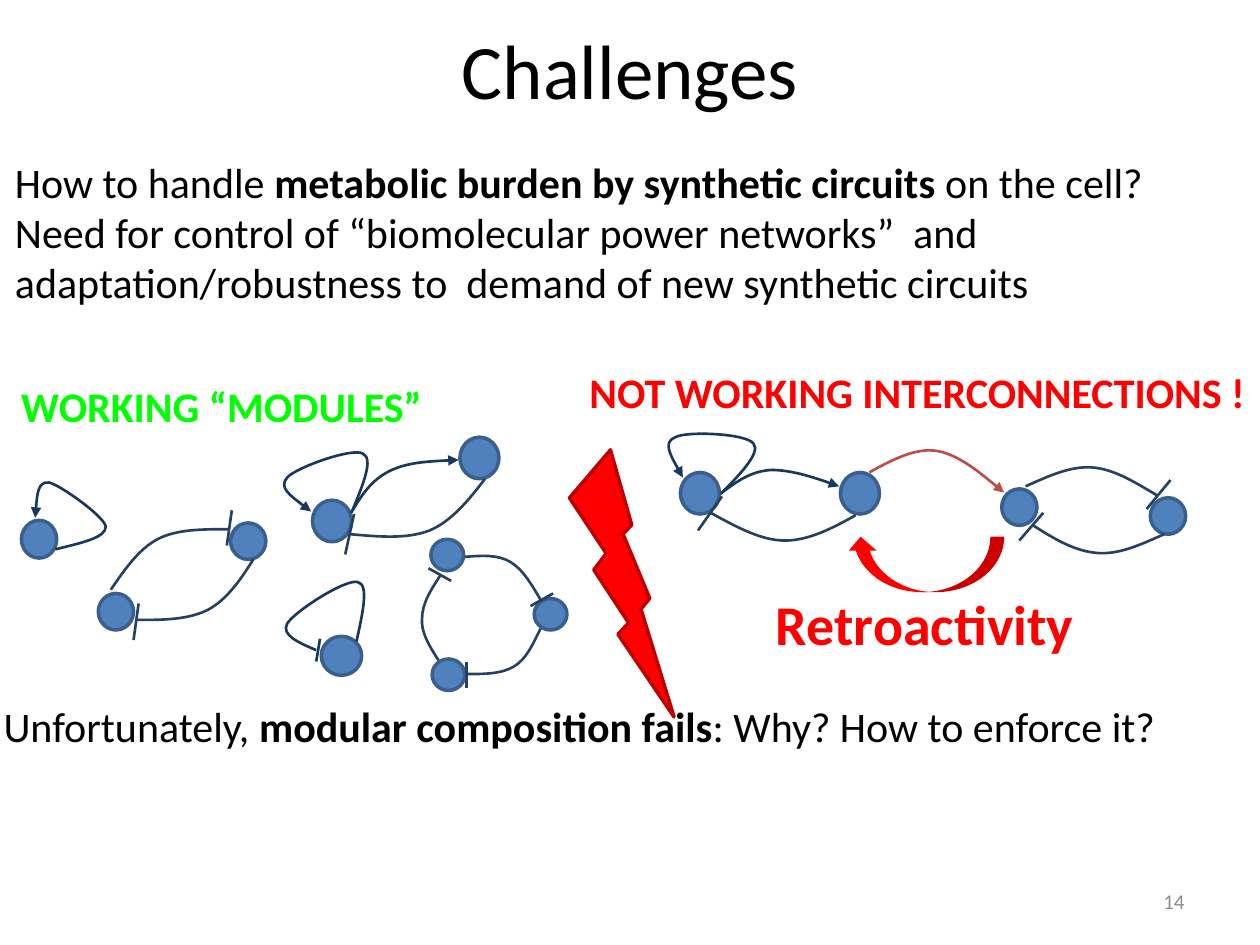
from lxml.etree import SubElement
from pptx import Presentation
from pptx.dml.color import RGBColor
from pptx.enum.shapes import MSO_CONNECTOR, MSO_SHAPE
from pptx.enum.text import MSO_ANCHOR, PP_ALIGN
from pptx.oxml.ns import qn
from pptx.util import Inches, Pt

FONT = "Calibri"
NAVY, STEEL, BLUE, RED = "17375E", "254061", "4F81BD", "FF0000"


def color(hex_text):
    return RGBColor.from_string(hex_text)


def lengths(*values):
    return [Inches(value) for value in values]


def style_line(line, hex_text, width=1.5):
    line.color.rgb = color(hex_text)
    line.width = Pt(width)


def write(box, paragraphs, size, hex_text="000000", bold=False,
          align=PP_ALIGN.LEFT, anchor=MSO_ANCHOR.TOP, wrap=True):
    """Each paragraph is a list of spans; every second span is bold."""
    frame = box.text_frame
    frame.word_wrap = wrap
    frame.vertical_anchor = anchor
    for index, spans in enumerate(paragraphs):
        para = frame.add_paragraph() if index else frame.paragraphs[0]
        para.alignment = align
        font = para.font
        font.name, font.size, font.bold = FONT, Pt(size), bold
        font.color.rgb = color(hex_text)
        for position, text in enumerate(spans):
            span = para.add_run()
            span.text = text
            if position % 2:
                span.font.bold = True


def add_text(page, place, paragraphs, size, **options):
    write(page.shapes.add_textbox(*lengths(*place)), paragraphs, size, **options)


def add_preset(page, kind, place, fill, outline=None):
    shape = page.shapes.add_shape(kind, *lengths(*place))
    shape.shadow.inherit = False
    shape.fill.solid()
    shape.fill.fore_color.rgb = color(fill)
    if outline:
        style_line(shape.line, outline, 2)
    else:
        shape.line.fill.background()
    return shape


def add_nodes(page, size, corners):
    for corner in corners:
        add_preset(page, MSO_SHAPE.OVAL, (*corner, *size), BLUE, "3A5F8C")


def add_curve(page, points, hex_text):
    """Draw a chain of cubic curves: a start, then three points per curve."""
    start, *rest = [lengths(*point) for point in points]
    builder = page.shapes.build_freeform(*start)
    builder.add_line_segments(rest, close=False)
    shape = builder.convert_to_shape()
    shape.shadow.inherit = False
    shape.fill.background()
    style_line(shape.line, hex_text)
    # Turn each three straight segments into one cubic curve
    outline = next(shape.element.iter(qn("a:path")))
    segments = outline.findall(qn("a:lnTo"))
    for first in range(0, len(segments), 3):
        cubic = SubElement(outline, qn("a:cubicBezTo"))
        for segment in segments[first:first + 3]:
            cubic.append(segment[0])
            outline.remove(segment)
    return shape


def activate(page, points, hex_text=NAVY):
    shape = add_curve(page, points, hex_text)
    SubElement(shape.line._get_or_add_ln(), qn("a:tailEnd"), type="triangle")


def repress(page, points, bar, hex_text=STEEL):
    add_curve(page, points, hex_text)
    line = page.shapes.add_connector(MSO_CONNECTOR.STRAIGHT, *lengths(*bar))
    style_line(line.line, hex_text)
    SubElement(line.element.spPr, qn("a:effectLst"))


def add_working_modules(page):
    # Toggle switch
    add_nodes(page, (0.28, 0.29), [(0.78, 4.71), (1.83, 4.15)])
    repress(page, [(0.88, 4.68), (0.99, 4.52), (1.1, 4.36), (1.25, 4.28),
                   (1.4, 4.2), (1.61, 4.2), (1.81, 4.2)], (1.84, 4.05, 1.8, 4.33))
    repress(page, [(2.01, 4.44), (1.91, 4.6), (1.8, 4.76), (1.65, 4.84),
                   (1.49, 4.92), (1.29, 4.92), (1.09, 4.92)], (1.06, 5.08, 1.1, 4.79))
    # Self-repression
    add_nodes(page, (0.32, 0.31), [(2.55, 5.05)])
    repress(page, [(2.83, 5.09), (2.88, 4.86), (2.93, 4.64), (2.84, 4.62),
                   (2.75, 4.59), (2.34, 4.85), (2.28, 4.95),
                   (2.23, 5.04), (2.37, 5.1), (2.51, 5.16)],
            (2.51, 5.25, 2.54, 5.07), NAVY)
    # Self-activation
    add_nodes(page, (0.28, 0.3), [(0.17, 4.13)])
    activate(page, [(0.44, 4.36), (0.64, 4.31), (0.84, 4.27), (0.84, 4.18),
                    (0.83, 4.1), (0.48, 3.85), (0.39, 3.83),
                    (0.3, 3.82), (0.29, 3.97), (0.28, 4.11)])
    # Oscillator
    add_nodes(page, (0.31, 0.33), [(2.48, 3.97), (3.65, 3.47)])
    activate(page, [(2.79, 4.07), (2.88, 3.85), (2.97, 3.64), (2.88, 3.6),
                    (2.8, 3.55), (2.35, 3.71), (2.28, 3.79),
                    (2.21, 3.87), (2.34, 3.96), (2.47, 4.06)])
    activate(page, [(2.8, 4.05), (2.87, 3.93), (2.95, 3.81), (3.09, 3.74),
                    (3.23, 3.67), (3.44, 3.66), (3.64, 3.65)])
    repress(page, [(3.85, 3.8), (3.72, 3.97), (3.58, 4.14), (3.41, 4.21),
                   (3.23, 4.28), (3.01, 4.26), (2.78, 4.24)], (2.74, 4.4, 2.81, 4.08))
    # Ring of three
    add_nodes(page, (0.26, 0.25), [(3.42, 4.28), (4.24, 4.75), (3.43, 5.23)])
    repress(page, [(3.69, 4.42), (3.82, 4.41), (3.95, 4.4), (4.05, 4.46),
                   (4.15, 4.52), (4.22, 4.64), (4.29, 4.76)], (4.39, 4.71, 4.21, 4.81))
    repress(page, [(4.29, 4.99), (4.23, 5.11), (4.18, 5.23), (4.08, 5.29),
                   (3.98, 5.35), (3.84, 5.35), (3.71, 5.35)], (3.7, 5.46, 3.7, 5.25))
    repress(page, [(3.48, 5.24), (3.41, 5.13), (3.34, 5.02), (3.35, 4.91),
                   (3.35, 4.79), (3.42, 4.68), (3.5, 4.56)], (3.4, 4.51, 3.58, 4.61))


def add_interconnection(page):
    # Oscillator
    add_nodes(page, (0.31, 0.33), [(5.4, 3.75), (6.67, 3.75)])
    activate(page, [(5.72, 3.92), (5.88, 3.76), (6.04, 3.59), (5.98, 3.52),
                    (5.92, 3.44), (5.45, 3.42), (5.36, 3.47),
                    (5.26, 3.51), (5.34, 3.65), (5.42, 3.79)])
    activate(page, [(5.73, 3.91), (5.85, 3.82), (5.96, 3.74), (6.12, 3.73),
                    (6.27, 3.73), (6.47, 3.79), (6.66, 3.86)])
    repress(page, [(6.79, 4.09), (6.61, 4.19), (6.42, 4.29), (6.23, 4.29),
                   (6.04, 4.29), (5.84, 4.18), (5.64, 4.07)], (5.54, 4.21, 5.73, 3.94))
    # Link between the modules
    activate(page, [(6.9, 3.75), (7.08, 3.65), (7.27, 3.55), (7.44, 3.58),
                    (7.62, 3.61), (7.97, 3.91), (7.97, 3.91)], "BF4C48")
    # Toggle switch
    add_nodes(page, (0.28, 0.29), [(7.95, 3.88), (9.13, 3.95)])
    repress(page, [(8.14, 3.86), (8.32, 3.78), (8.49, 3.7), (8.66, 3.71),
                   (8.84, 3.72), (9.01, 3.83), (9.18, 3.93)], (9.29, 3.81, 9.1, 4.04))
    repress(page, [(9.24, 4.24), (9.06, 4.32), (8.89, 4.4), (8.72, 4.39),
                   (8.54, 4.38), (8.37, 4.28), (8.2, 4.17)], (8.09, 4.29, 8.28, 4.07))


def main():
    deck = Presentation()
    deck.slide_width, deck.slide_height = lengths(10, 7.5)
    page = deck.slides.add_slide(deck.slide_layouts[5])

    # Title and text
    title = page.shapes.title
    title.left, title.top, title.width, title.height = lengths(0.5, -0.08, 9, 1.25)
    write(title, [["Challenges"]], 44, align=PP_ALIGN.CENTER, anchor=MSO_ANCHOR.MIDDLE)
    add_text(page, (0.02, 1.19, 10.18, 1.31), [
        ["How to handle ", "metabolic burden by synthetic circuits ", "on the cell?"],
        ["Need for control of “biomolecular power networks”  and "
         "adaptation/robustness to  demand of new synthetic circuits"]], 24)
    add_text(page, (7.17, 6.95, 2.33, 0.4), [["14"]], 12, hex_text="8C8C8C",
             align=PP_ALIGN.RIGHT, anchor=MSO_ANCHOR.MIDDLE)
    add_text(page, (-0.07, 5.51, 10.17, 0.5), [
        ["Unfortunately, ", "modular composition fails",
         ": Why? How to enforce it?"]], 24)

    # Modules that work alone
    add_working_modules(page)
    add_text(page, (0.07, 2.97, 3.41, 0.5), [["WORKING “MODULES”"]], 24,
             hex_text="00FF00", bold=True, wrap=False)

    # Modules that fail together
    add_interconnection(page)
    add_preset(page, MSO_SHAPE.LIGHTNING_BOLT, (4.52, 3.57, 0.83, 2.12), RED, "C00000")
    add_text(page, (4.58, 2.86, 5.45, 0.5), [["NOT WORKING INTERCONNECTIONS !"]], 24,
             hex_text=RED, bold=True, wrap=False)

    # Retroactivity
    arrow = add_preset(page, MSO_SHAPE.CURVED_UP_ARROW, (6.72, 4.26, 1.25, 0.44), RED)
    arrow.element.spPr.xfrm.set("flipH", "1")
    add_text(page, (6.06, 4.63, 2.59, 0.64), [["Retroactivity"]], 32,
             hex_text=RED, bold=True, wrap=False)

    deck.save("out.pptx")


if __name__ == "__main__":
    main()
